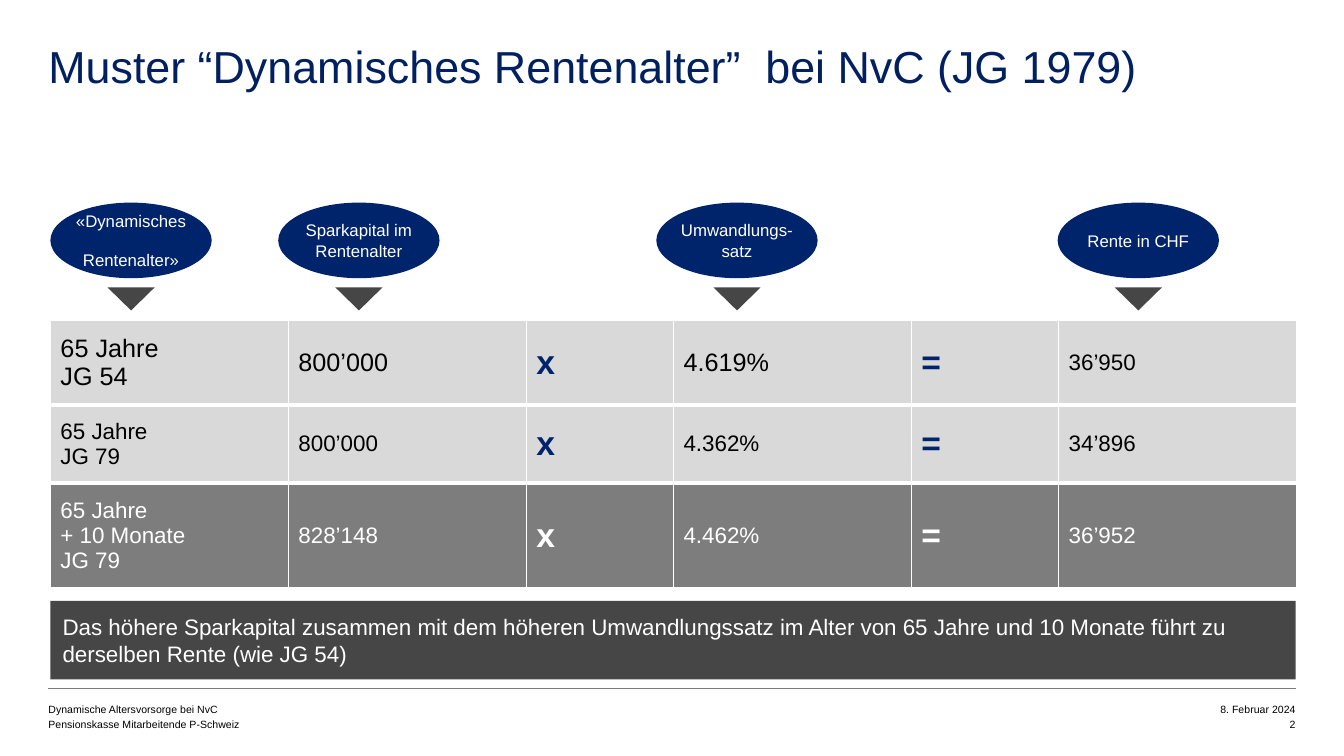
from pptx import Presentation
from pptx import util as u
from pptx.dml.color import RGBColor
from pptx.enum import shapes, text
from pptx.oxml import parse_xml
from pptx.oxml.ns import nsdecls
from lxml import etree

# Content
TITLE = "Muster “Dynamisches Rentenalter”  bei NvC (JG 1979)"
HEADS = [  # left edge, label
    (0.5, "«Dynamisches\nRentenalter»"),
    (2.76, "Sparkapital im Rentenalter"),
    (6.51, "Umwandlungs-satz"),
    (10.49, "Rente in CHF"),
]
ROWS = [  # age, capital, rate, pension
    ("65 Jahre\nJG 54", "800’000", "4.619%", "36’950"),
    ("65 Jahre\nJG 79", "800’000", "4.362%", "34’896"),
    ("65 Jahre \v+ 10 Monate\nJG 79", "828’148", "4.462%", "36’952"),
]
MESSAGE = ("Das höhere Sparkapital zusammen mit dem höheren Umwandlungssatz im Alter "
           "von 65 Jahre und 10 Monate führt zu derselben Rente (wie JG 54)")
FOOT_LEFT = ["Dynamische Altersvorsorge bei NvC", "Pensionskasse Mitarbeitende P-Schweiz"]
FOOT_RIGHT = ["8. Februar 2024", "2"]

# Style and grid
NAVY, BLUE, DARK, GREY, LIGHT = "002060", "00246B", "464646", "7D7D7D", "D9D9D9"
BLACK, WHITE = "000000", "FFFFFF"
EDGE, LEFT, RIGHT = 0.48, 0.5, 12.85
OVAL_W, OVAL_H, TIP_W, TIP_H = 1.6, 0.75, 0.47, 0.23
WIDE, NARROW = 2.36, 1.46
COL_W = [WIDE, WIDE, NARROW, WIDE, NARROW, WIDE]
ROW_H = [0.84, 0.77, 1.03]
FOOT_Y, FOOT_H = 6.95, 0.15

prs = Presentation()
prs.slide_width, prs.slide_height = u.Inches(13.33), u.Inches(7.5)
s = prs.slides.add_slide(prs.slide_layouts[6])


def rgb(value):
    return RGBColor.from_string(value)


def inches(*values):
    return [u.Inches(v) for v in values]


def write(tf, content, size, color, align=text.PP_ALIGN.LEFT, bold=False):
    tf.text = content
    for p in tf.paragraphs:
        p.alignment = align
        for r in p.runs:
            r.font.name, r.font.size, r.font.bold = "Arial", u.Pt(size), bold
            r.font.color.rgb = rgb(color)


def frame(tf, anchor, side=0, end=0):
    tf.word_wrap = True
    tf.vertical_anchor = anchor
    tf.margin_left = tf.margin_right = u.Inches(side)
    tf.margin_top = tf.margin_bottom = u.Inches(end)


def label(box, content, size, color, anchor, align=text.PP_ALIGN.LEFT):
    tf = s.shapes.add_textbox(*inches(*box)).text_frame
    frame(tf, anchor)
    write(tf, content, size, color, align)
    return tf


def block(kind, box, fill):
    sp = s.shapes.add_shape(kind, *inches(*box))
    sp.shadow.inherit = False
    sp.fill.solid()
    sp.fill.fore_color.rgb = rgb(fill)
    sp.line.fill.background()
    return sp


def border(cell, side):
    line = parse_xml(f'<a:{side} {nsdecls("a")} w="38100"><a:solidFill>'
                     f'<a:srgbClr val="{WHITE}"/></a:solidFill></a:{side}>')
    tc_pr = cell._tc.get_or_add_tcPr()
    tc_pr.insert(len(tc_pr.findall("{*}lnT")), line)


# Title
title = label((EDGE, 0.47, 12.36, 1.52), TITLE, 32, NAVY, text.MSO_ANCHOR.TOP)
title.paragraphs[0].line_spacing = 0.85

# Column heads with pointers
for x, head in HEADS:
    oval = block(shapes.MSO_SHAPE.OVAL, (x, 2.01, OVAL_W, OVAL_H), BLUE)
    frame(oval.text_frame, text.MSO_ANCHOR.MIDDLE, 0, 0.08)
    write(oval.text_frame, head, 12, WHITE, text.PP_ALIGN.CENTER)
    for p in oval.text_frame.paragraphs[1:]:
        p.space_before = u.Pt(14)
    tip = block(shapes.MSO_SHAPE.ISOSCELES_TRIANGLE,
                (x + (OVAL_W - TIP_W) / 2, 2.85, TIP_W, TIP_H), DARK)
    tip.rotation = 180

# Calculation table
table = s.shapes.add_table(len(ROWS), len(COL_W),
                           *inches(LEFT, 3.18, sum(COL_W), sum(ROW_H))).table
table.first_row = table.horz_banding = False
for col, width in zip(table.columns, COL_W):
    col.width = u.Inches(width)
for i, (age, capital, rate, pension) in enumerate(ROWS):
    table.rows[i].height = u.Inches(ROW_H[i])
    last = i == len(ROWS) - 1
    for j, value in enumerate([age, capital, "x", rate, "=", pension]):
        cell = table.cell(i, j)
        sign = value in ("x", "=")
        size = 24 if sign else 18 if i == 0 and j < 5 else 16
        color = WHITE if last else BLUE if sign else BLACK
        write(cell.text_frame, value, size, color, bold=sign)
        cell.vertical_anchor = text.MSO_ANCHOR.MIDDLE
        cell.margin_left = cell.margin_right = u.Inches(0.1)
        cell.margin_top = cell.margin_bottom = u.Inches(0.12)
        cell.fill.solid()
        cell.fill.fore_color.rgb = rgb(GREY if last else LIGHT)
        if i:
            border(cell, "lnT")
        if not last:
            border(cell, "lnB")

# Key message
bar = block(shapes.MSO_SHAPE.RECTANGLE, (LEFT, 5.96, RIGHT - LEFT, 0.78), DARK)
frame(bar.text_frame, text.MSO_ANCHOR.MIDDLE, 0.12, 0.12)
write(bar.text_frame, MESSAGE, 16, WHITE)

# Footer
rule = s.shapes.add_connector(shapes.MSO_CONNECTOR.STRAIGHT, *inches(EDGE, 6.83, RIGHT, 6.83))
rule.line.color.rgb = rgb(GREY)
rule.line.width = u.Pt(0.25)
etree.SubElement(rule._element.spPr, "{http://schemas.openxmlformats.org/drawingml/2006/main}effectLst")
for x, width, lines, align in [(EDGE, 5.99, FOOT_LEFT, text.PP_ALIGN.LEFT),
                               (10.92, 1.93, FOOT_RIGHT, text.PP_ALIGN.RIGHT)]:
    for i, line in enumerate(lines):
        label((x, FOOT_Y + i * FOOT_H, width, FOOT_H), line, 7.5, BLACK,
              text.MSO_ANCHOR.BOTTOM, align)

prs.save("out.pptx")
